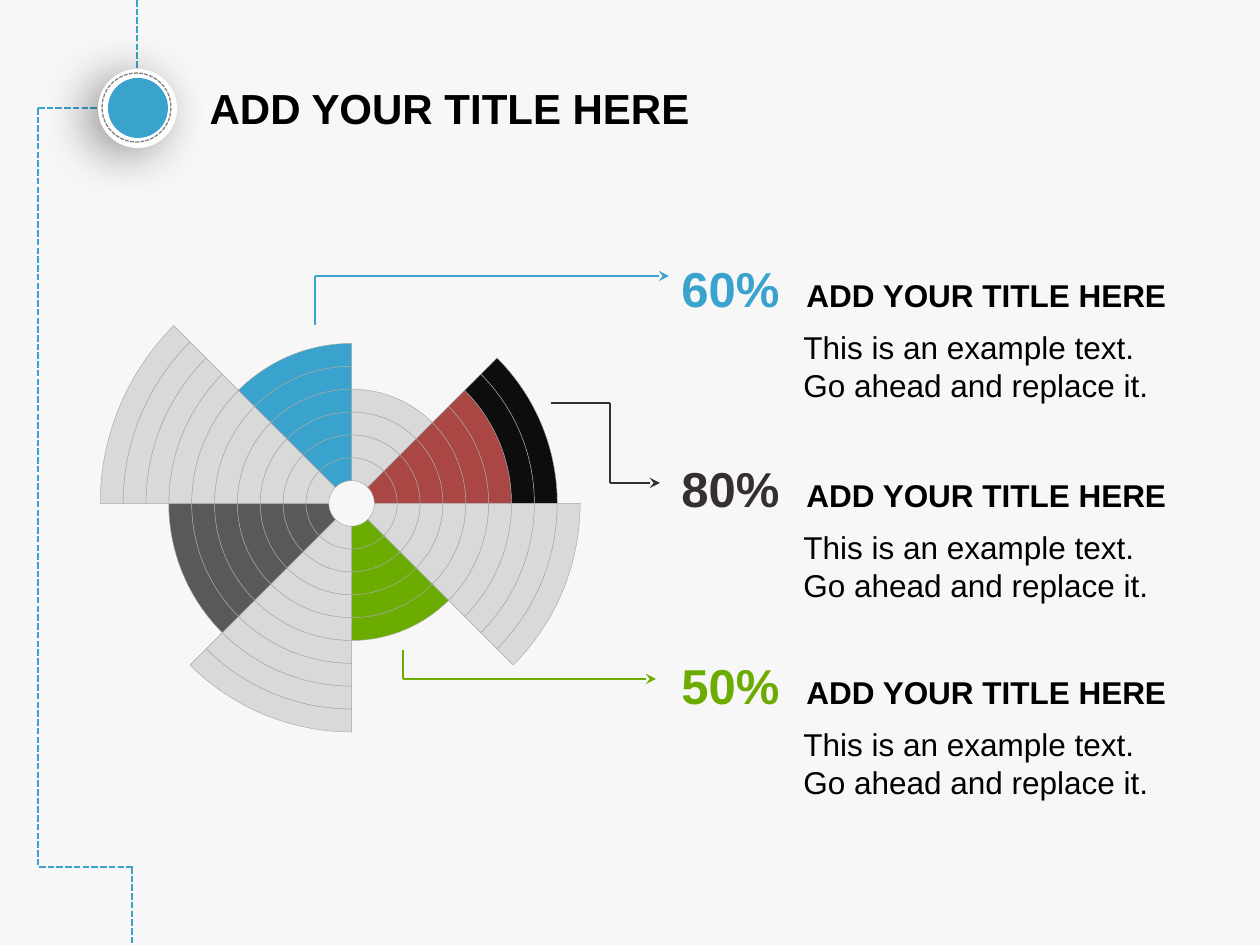
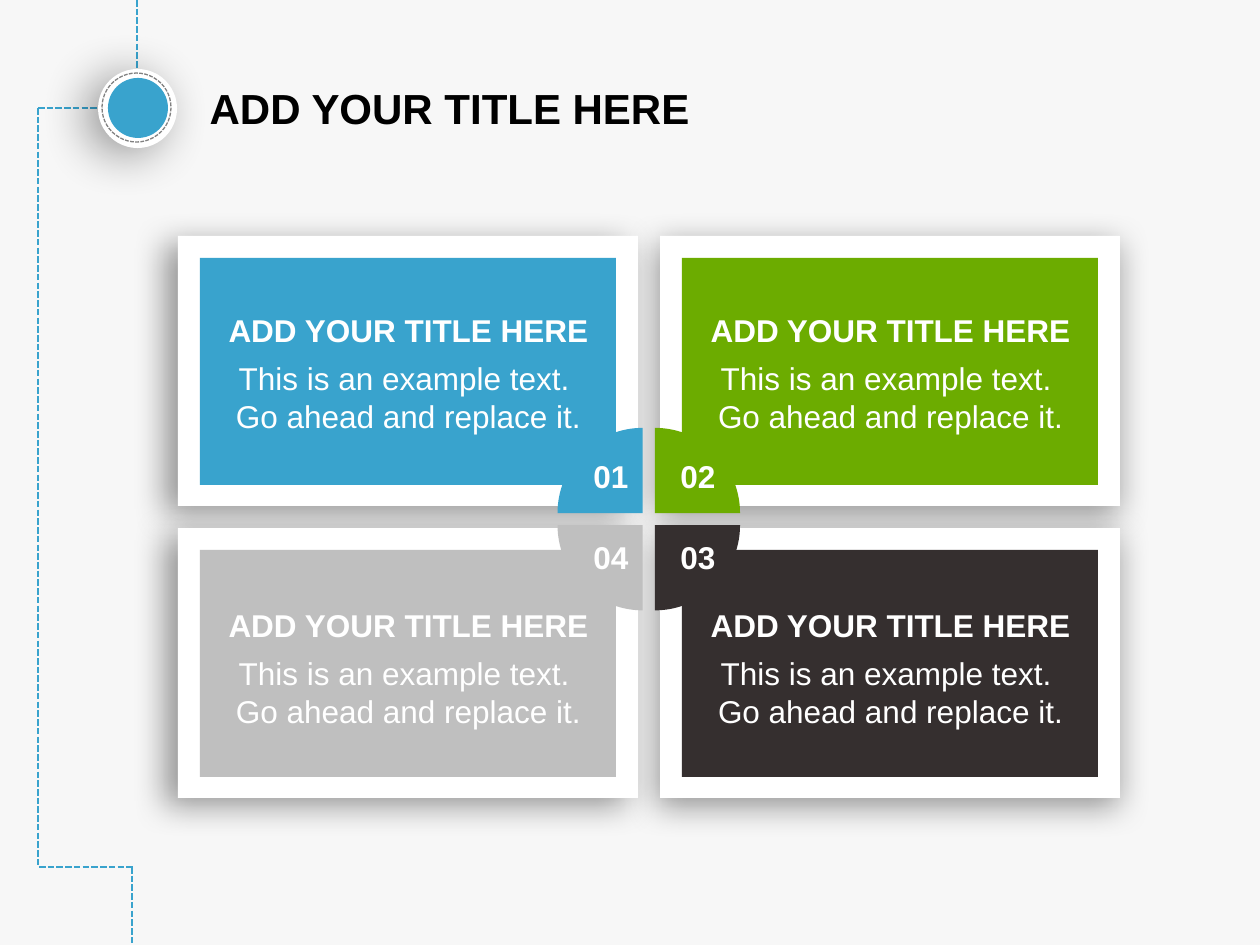
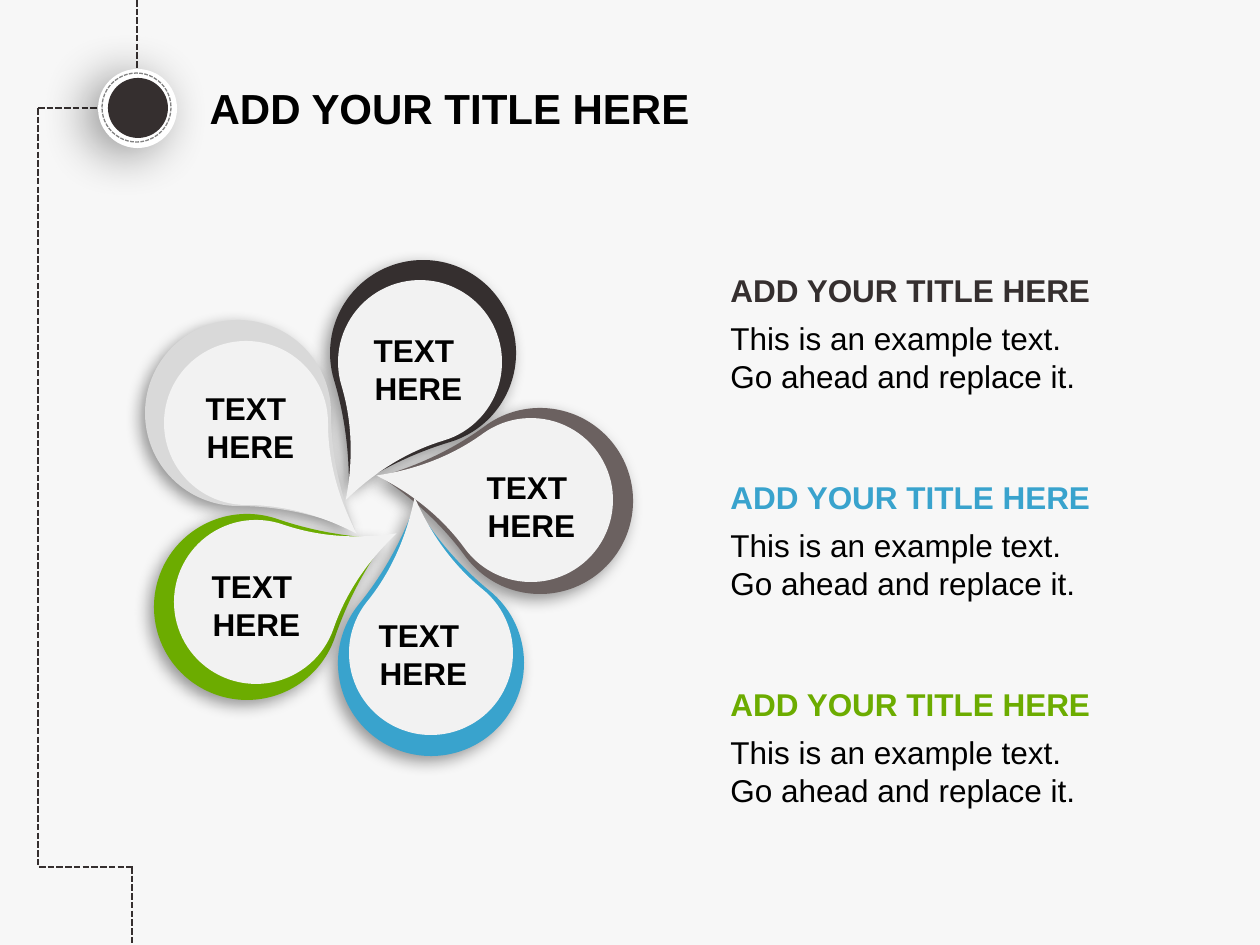
from dataclasses import dataclass

from lxml.etree import SubElement
from pptx import Presentation
from pptx.chart.data import CategoryChartData
from pptx.dml.color import RGBColor
from pptx.enum.chart import XL_CHART_TYPE
from pptx.enum.dml import MSO_LINE
from pptx.enum.shapes import MSO_CONNECTOR, MSO_SHAPE
from pptx.enum.text import MSO_ANCHOR, MSO_AUTO_SIZE, PP_ALIGN
from pptx.oxml import parse_xml
from pptx.oxml.ns import nsdecls, qn
from pptx.util import Emu, Pt


@dataclass(frozen=True)
class Theme:
    background: str = "F7F7F7"
    blue: str = "39A3CD"
    green: str = "6CAC00"
    dark: str = "352F2F"
    taupe: str = "6B6160"
    red: str = "AA4643"
    black: str = "000000"
    near_black: str = "0D0D0D"
    charcoal: str = "595959"
    grey: str = "808080"
    outline_grey: str = "A6A6A6"
    mid_grey: str = "BFBFBF"
    light_grey: str = "D9D9D9"
    petal_core: str = "F2F2F2"
    white: str = "FFFFFF"
    font: str = "Arial"
    chart_font: str = "Calibri"
    title_size: int = 24
    figure_size: int = 28
    text_size: int = 18


THEME = Theme()
SLIDE_W, SLIDE_H = 1260, 945
PX = 914400 / 126

TITLE = "ADD YOUR TITLE HERE"
HEADING = "ADD YOUR TITLE HERE"
BODY = ("This is an example text.", "Go ahead and replace it.")
CENTRED_BODY = ("This is an example text. ", "Go ahead and replace it.")

# Shadows: blur and distance in points, direction in degrees
BADGE_SHADOW = (28, 8, 150)
LEFT_CARD_SHADOW = (19, 9, 150)
RIGHT_CARD_SHADOW = (19, 5, 110)
PETAL_SHADOW = (9, 4, 135)

RAIL = [
    ((38, 108), (142, 108)),
    ((137, 0), (137, 105)),
    ((38, 108), (38, 867)),
    ((39, 867), (134, 867)),
    ((132, 867), (132, 945)),
]

# Slide 1: each sector is a run of (colour, number of rings) from the hub outwards
SECTORS = [
    [(THEME.light_grey, 4)],
    [(THEME.red, 6), (THEME.near_black, 2)],
    [(THEME.light_grey, 9)],
    [(THEME.green, 5)],
    [(THEME.light_grey, 9)],
    [(THEME.charcoal, 7)],
    [(THEME.light_grey, 10)],
    [(THEME.blue, 6)],
]
RING_COUNT = 10
SECTOR_VALUE = 12
# figure, colour, text top, leader points
CALLOUTS = [
    ("60%", THEME.blue, 223, [(315, 325), (315, 276), (669, 276)]),
    ("80%", THEME.dark, 423, [(551, 403), (610, 403), (610, 483), (660, 483)]),
    ("50%", THEME.green, 620, [(403, 650), (403, 679), (656, 679)]),
]

# Slide 2: number, colour, column, row, in clockwise order
CARDS = [
    ("01", THEME.blue, 0, 0),
    ("02", THEME.green, 1, 0),
    ("03", THEME.dark, 1, 1),
    ("04", THEME.mid_grey, 0, 1),
]

# Slide 3: left, top, size, rotation, point length, colour, from back to front
PETALS = [
    (330, 260, 186, 163.3, 1.19, THEME.dark),
    (447, 408, 186, 233.7, 1.23, THEME.taupe),
    (145, 320, 186, 90, 1.26, THEME.light_grey),
    (154, 514, 186, 18.9, 1.18, THEME.green),
    (338, 280, 164, 163.3, 1.35, THEME.petal_core),
    (449, 418, 164, 234, 1.35, THEME.petal_core),
    (338, 570, 186, 309.2, 1.21, THEME.blue),
    (349, 571, 164, 309, 1.35, THEME.petal_core),
    (174, 520, 164, 19, 1.35, THEME.petal_core),
    (164, 341, 164, 90, 1.35, THEME.petal_core),
]
PETAL_LABEL = ("TEXT", " HERE")
PETAL_LABEL_SPOTS = [(353, 325), (185, 383), (191, 561), (358, 610), (466, 462)]
TOPIC_COLOURS = [THEME.dark, THEME.blue, THEME.green]


def px(*lengths):
    return [Emu(round(length * PX)) for length in lengths]


def rgb(colour):
    return RGBColor.from_string(colour)


def add_run(paragraph, text, colour=THEME.black, size=THEME.text_size, bold=True):
    run = paragraph.add_run()
    run.text = text
    run.font.name = THEME.font
    run.font.size = Pt(size)
    run.font.bold = bold
    run.font.color.rgb = rgb(colour)


def add_lines(slide, box, lines, align=PP_ALIGN.LEFT, wrap=True):
    """Add a text box; each line is a list of add_run argument tuples."""
    frame = slide.shapes.add_textbox(*px(*box)).text_frame
    frame.word_wrap = wrap
    for index, runs in enumerate(lines):
        paragraph = frame.add_paragraph() if index else frame.paragraphs[0]
        paragraph.alignment = align
        for run in runs:
            add_run(paragraph, *run)
    return frame.paragraphs


def add_topic(slide, box, heading_runs, body, body_colour=THEME.black, align=PP_ALIGN.LEFT):
    """Add a spaced heading with regular lines below it."""
    body_lines = [[(text, body_colour, THEME.text_size, False)] for text in body]
    paragraphs = add_lines(slide, box, [heading_runs] + body_lines, align)
    paragraphs[0].line_spacing = 1.5
    paragraphs[0].space_after = Pt(6)
    return paragraphs


def add_shadow(shape, blur, distance, direction):
    effects = shape.element.spPr.find(qn("a:effectLst"))
    shadow = SubElement(effects, qn("a:outerShdw"), blurRad=str(Pt(blur)),
                        dist=str(Pt(distance)), dir=str(direction * 60000),
                        algn="ctr", rotWithShape="0")
    colour = SubElement(shadow, qn("a:srgbClr"), val=THEME.black)
    SubElement(colour, qn("a:alpha"), val="40000")


def add_figure(slide, preset, box, fill=None, shadow=None):
    figure = slide.shapes.add_shape(preset, *px(*box))
    figure.shadow.inherit = False
    figure.line.fill.background()
    if fill:
        figure.fill.solid()
        figure.fill.fore_color.rgb = rgb(fill)
    else:
        figure.fill.background()
    if shadow:
        add_shadow(figure, *shadow)
    return figure


def style_line(line, colour, width, dashed=False):
    line.color.rgb = rgb(colour)
    line.width = Pt(width)
    if dashed:
        line.dash_style = MSO_LINE.SQUARE_DOT


def add_straight(slide, start, end, colour, width, dashed=False, arrow=False):
    connector = slide.shapes.add_connector(MSO_CONNECTOR.STRAIGHT, *px(*start, *end))
    style_line(connector.line, colour, width, dashed)
    properties = connector.element.spPr
    if arrow:
        SubElement(properties.find(qn("a:ln")), qn("a:tailEnd"), type="stealth")
    SubElement(properties, qn("a:effectLst"))


def add_base_slide(prs, accent):
    """Add a slide with its title, dashed rail and round badge."""
    slide = prs.slides.add_slide(prs.slide_layouts[5])
    title = slide.shapes.title
    title.left, title.top, title.width, title.height = px(197, 64, 679, 88)
    frame = title.text_frame
    frame.word_wrap = True
    frame.auto_size = MSO_AUTO_SIZE.NONE
    frame.vertical_anchor = MSO_ANCHOR.MIDDLE
    frame.paragraphs[0].alignment = PP_ALIGN.LEFT
    add_run(frame.paragraphs[0], TITLE, size=THEME.title_size)

    for start, end in RAIL:
        add_straight(slide, start, end, accent, 1.25, dashed=True)
    add_figure(slide, MSO_SHAPE.OVAL, (98, 69, 79, 79), THEME.white, BADGE_SHADOW)
    add_figure(slide, MSO_SHAPE.OVAL, (108, 78, 60, 60), accent)
    stitching = add_figure(slide, MSO_SHAPE.OVAL, (102, 73, 69, 69))
    style_line(stitching.line, THEME.grey, 0.75, dashed=True)
    return slide


def add_round_chart(slide, kind, box, series_values, plot_box):
    """Add a bare pie or doughnut; plot_box holds fractions of the chart area."""
    data = CategoryChartData()
    data.categories = [str(n + 1) for n in range(len(series_values[0]))]
    for number, values in enumerate(series_values, 1):
        data.add_series(f"Series {number}", values)
    chart = slide.shapes.add_chart(kind, *px(*box), data).chart
    chart.has_legend = False
    chart.has_title = False
    chart.font.name = THEME.chart_font
    chart.font.size = Pt(THEME.text_size)
    chart.font.color.rgb = rgb(THEME.black)
    chart.plots[0].vary_by_categories = True

    chart_space = chart.element
    chart_space.find(qn("c:chart")).addnext(parse_xml(
        f'<c:spPr {nsdecls("c", "a")}><a:noFill/><a:ln><a:noFill/></a:ln></c:spPr>'))
    plot_area = next(chart_space.iter(qn("c:plotArea")))
    for old_layout in plot_area.findall(qn("c:layout")):
        plot_area.remove(old_layout)
    layout = parse_xml(f'<c:layout {nsdecls("c")}><c:manualLayout/></c:layout>')
    settings = [("layoutTarget", "inner"), ("xMode", "edge"), ("yMode", "edge"),
                *zip("xywh", plot_box)]
    for name, value in settings:
        SubElement(layout[0], qn(f"c:{name}"), val=str(value))
    plot_area.insert(0, layout)
    return chart


def paint_point(point, fill, outline=None):
    point.format.line.fill.background()
    if not fill:
        point.format.fill.background()
        return
    point.format.fill.solid()
    point.format.fill.fore_color.rgb = rgb(fill)
    if outline:
        style_line(point.format.line, outline, 0.25)


def build_sector_slide(prs):
    slide = add_base_slide(prs, THEME.blue)
    rings = [[SECTOR_VALUE] * len(SECTORS)] * RING_COUNT
    chart = add_round_chart(slide, XL_CHART_TYPE.DOUGHNUT, (78, 236, 542, 535),
                            rings, (0.04, 0.03, 0.93, 0.94))
    next(chart.element.iter(qn("c:holeSize"))).set("val", "10")
    for sector, bands in enumerate(SECTORS):
        fills = [colour for colour, count in bands for _ in range(count)]
        fills += [None] * (RING_COUNT - len(fills))
        for ring, fill in zip(chart.plots[0].series, fills):
            paint_point(ring.points[sector], fill, THEME.outline_grey)

    body_indent, heading_tab = px(122, 125)
    for figure, colour, top, leader in CALLOUTS:
        for start, end in zip(leader, leader[1:]):
            add_straight(slide, start, end, colour, 0.75, arrow=end == leader[-1])
        heading = [(figure, colour, THEME.figure_size), ("\t" + HEADING,)]
        first, *rest = add_topic(slide, (669, top, 551, 189), heading, BODY)
        tabs = SubElement(first._p.get_or_add_pPr(), qn("a:tabLst"))
        SubElement(tabs, qn("a:tab"), pos=str(heading_tab), algn="l")
        for paragraph in rest:
            paragraph._p.get_or_add_pPr().set("marL", str(body_indent))


def build_card_slide(prs):
    slide = add_base_slide(prs, THEME.blue)
    lefts, tops, text_tops = (178, 660), (236, 528), (286, 581)
    border = 22
    for _, _, column, row in sorted(CARDS, key=lambda card: -card[2]):
        add_figure(slide, MSO_SHAPE.RECTANGLE, (lefts[column], tops[row], 460, 270),
                   THEME.white, RIGHT_CARD_SHADOW if column else LEFT_CARD_SHADOW)
    for _, colour, column, row in CARDS:
        add_figure(slide, MSO_SHAPE.RECTANGLE,
                   (lefts[column] + border, tops[row] + border, 416, 227), colour)

    quarters = CARDS[1:] + CARDS[:1]
    chart = add_round_chart(slide, XL_CHART_TYPE.PIE, (478, 396, 335, 237),
                            [[25] * len(quarters)], (0.23, 0.09, 0.56, 0.86))
    hub = chart.plots[0].series[0]
    for index, (_, colour, _, _) in enumerate(quarters):
        paint_point(hub.points[index], colour)
    explosion = parse_xml(f'<c:explosion {nsdecls("c")} val="10"/>')
    hub._element.find(qn("c:dPt")).addprevious(explosion)

    for number, _, column, row in CARDS:
        add_lines(slide, (581 + 87 * column, 451 + 81 * row, 60, 50),
                  [[(number, THEME.white)]], PP_ALIGN.CENTER, wrap=False)
        add_topic(slide, (lefts[column] + 19, text_tops[row], 423, 158),
                  [(HEADING, THEME.white)], CENTRED_BODY, THEME.white, PP_ALIGN.CENTER)


def build_petal_slide(prs):
    slide = add_base_slide(prs, THEME.dark)
    for left, top, size, rotation, point_length, colour in PETALS:
        shadow = None if colour == THEME.petal_core else PETAL_SHADOW
        petal = add_figure(slide, MSO_SHAPE.TEAR, (left, top, size, size), colour, shadow)
        petal.adjustments[0] = point_length
        petal.rotation = rotation
    for left, top in PETAL_LABEL_SPOTS:
        add_lines(slide, (left, top, 122, 89), [[(word,)] for word in PETAL_LABEL],
                  PP_ALIGN.CENTER, wrap=False)
    for index, colour in enumerate(TOPIC_COLOURS):
        add_topic(slide, (718, 246 + 207 * index, 423, 158), [(HEADING, colour)], BODY)


def main():
    prs = Presentation()
    prs.slide_width, prs.slide_height = px(SLIDE_W, SLIDE_H)
    backdrop = prs.slide_master.background.fill
    backdrop.solid()
    backdrop.fore_color.rgb = rgb(THEME.background)
    build_sector_slide(prs)
    build_card_slide(prs)
    build_petal_slide(prs)
    prs.save("out.pptx")


if __name__ == "__main__":
    main()
